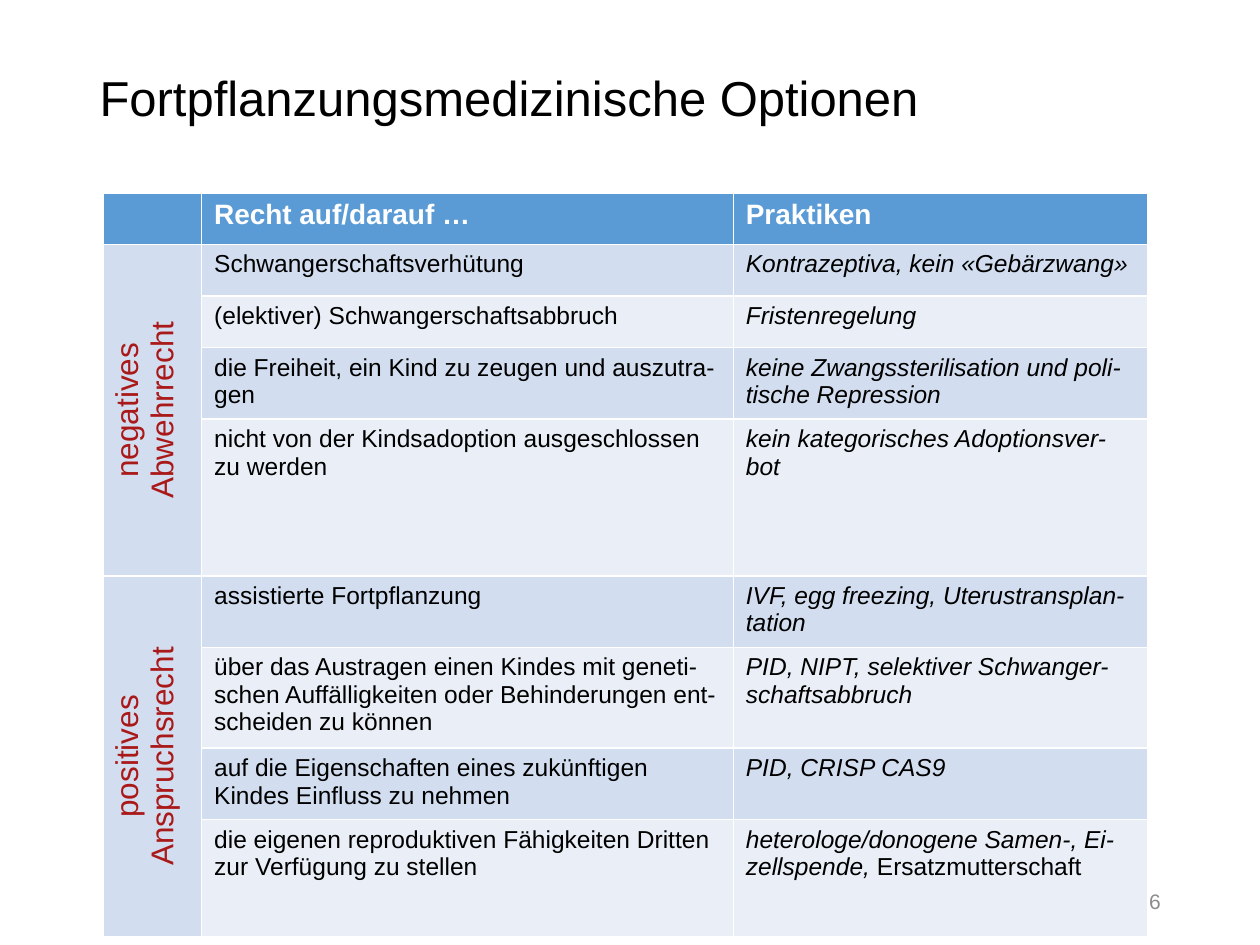
from pptx import Presentation
from pptx.dml.color import RGBColor
from pptx.enum.text import MSO_ANCHOR, PP_ALIGN
from pptx.util import Inches, Pt

LEFT, CENTER, RIGHT = PP_ALIGN.LEFT, PP_ALIGN.CENTER, PP_ALIGN.RIGHT
MIDDLE = MSO_ANCHOR.MIDDLE
TITLE_ONLY = 5

COLORS = {
    "header": "5B9BD5",
    "dark_band": "D2DEEF",
    "light_band": "EAEFF7",
    "white": "FFFFFF",
    "black": "000000",
    "red": "AA1919",
    "gray": "8C8C8C",
}
HEADINGS = ["", "Recht auf/darauf …", "Praktiken"]
COLUMN_WIDTHS = [0.78, 4.22, 3.29]
ROW_HEIGHT = 0.41
GROUPS = {
    "negatives Abwehrrecht": [
        ("Schwangerschaftsverhütung", "Kontrazeptiva, kein «Gebärzwang»"),
        ("(elektiver) Schwangerschaftsabbruch", "Fristenregelung"),
        ("die Freiheit, ein Kind zu zeugen und auszutra-gen",
         "keine Zwangssterilisation und poli-tische Repression"),
        ("nicht von der Kindsadoption ausgeschlossen zu werden",
         "kein kategorisches Adoptionsver-bot"),
    ],
    "positives Anspruchsrecht": [
        ("assistierte Fortpflanzung", "IVF, egg freezing, Uterustransplan-tation"),
        ("über das Austragen einen Kindes mit geneti-schen Auffälligkeiten "
         "oder Behinderungen ent-scheiden zu können",
         "PID, NIPT, selektiver Schwanger-schaftsabbruch"),
        ("auf die Eigenschaften eines zukünftigen Kindes Einfluss zu nehmen",
         "PID, CRISP CAS9"),
        ("die eigenen reproduktiven Fähigkeiten Dritten zur Verfügung zu stellen",
         "heterologe/donogene Samen-, Ei-zellspende, "),
    ],
}
UPRIGHT_ENDING = "Ersatzmutterschaft"


class SlideBuilder:
    """Holds the font and the current slide, and adds each kind of element."""

    def __init__(self, slide, font_name="Arial"):
        self.slide = slide
        self.font_name = font_name

    def set_text(self, frame, text, size, color, align=LEFT, bold=False, italic=False):
        paragraph = frame.paragraphs[0]
        paragraph.text = text
        paragraph.alignment = align
        font = paragraph.font
        font.name, font.size = self.font_name, Pt(size)
        font.bold, font.italic = bold, italic
        font.color.rgb = RGBColor.from_string(COLORS[color])
        return paragraph

    def title(self, text, left, top, width, height):
        shape = self.slide.shapes.title
        shape.left, shape.top = Inches(left), Inches(top)
        shape.width, shape.height = Inches(width), Inches(height)
        shape.text_frame.vertical_anchor = MIDDLE
        self.set_text(shape.text_frame, text, 28, "black").line_spacing = 0.9

    def page_number(self, text, left, top, width, height):
        shape = self.slide.shapes.add_textbox(
            Inches(left), Inches(top), Inches(width), Inches(height))
        shape.text_frame.word_wrap = True
        shape.text_frame.vertical_anchor = MIDDLE
        self.set_text(shape.text_frame, text, 12, "gray", RIGHT)

    def cell(self, cell, text, fill, size=14, color="black", **style):
        cell.fill.solid()
        cell.fill.fore_color.rgb = RGBColor.from_string(COLORS[fill])
        return self.set_text(cell.text_frame, text, size, color, **style)

    def group_cell(self, table, first, last, text):
        cell = table.cell(first, 0)
        cell.merge(table.cell(last, 0))
        self.cell(cell, text, "dark_band", 18, "red", align=CENTER)
        cell.vertical_anchor = MIDDLE
        cell._tc.get_or_add_tcPr().set("vert", "vert270")

    def rights_table(self, left, top):
        row_count = 1 + sum(len(rights) for rights in GROUPS.values())
        table = self.slide.shapes.add_table(
            row_count, len(HEADINGS), Inches(left), Inches(top),
            Inches(sum(COLUMN_WIDTHS)), Inches(ROW_HEIGHT * row_count)).table
        for column, width in zip(table.columns, COLUMN_WIDTHS):
            column.width = Inches(width)
        for row in table.rows:
            row.height = Inches(ROW_HEIGHT)
        for index, heading in enumerate(HEADINGS):
            self.cell(table.cell(0, index), heading, "header", 16, "white", bold=True)

        row_index = 1
        for group, rights in GROUPS.items():
            self.group_cell(table, row_index, row_index + len(rights) - 1, group)
            for right, practice in rights:
                band = "dark_band" if row_index % 2 else "light_band"
                self.cell(table.cell(row_index, 1), right, band)
                last_paragraph = self.cell(
                    table.cell(row_index, 2), practice, band, italic=True)
                row_index += 1
        ending = last_paragraph.add_run()
        ending.text = UPRIGHT_ENDING
        ending.font.italic = False


def main():
    presentation = Presentation()
    presentation.slide_width, presentation.slide_height = Inches(10), Inches(7.5)
    slide = presentation.slides.add_slide(presentation.slide_layouts[TITLE_ONLY])
    builder = SlideBuilder(slide)
    builder.page_number("6", 7.06, 6.95, 2.25, 0.4)
    builder.title("Fortpflanzungsmedizinische Optionen", 0.69, 0.4, 8.62, 0.79)
    builder.rights_table(0.82, 1.53)
    presentation.save("out.pptx")


if __name__ == "__main__":
    main()
